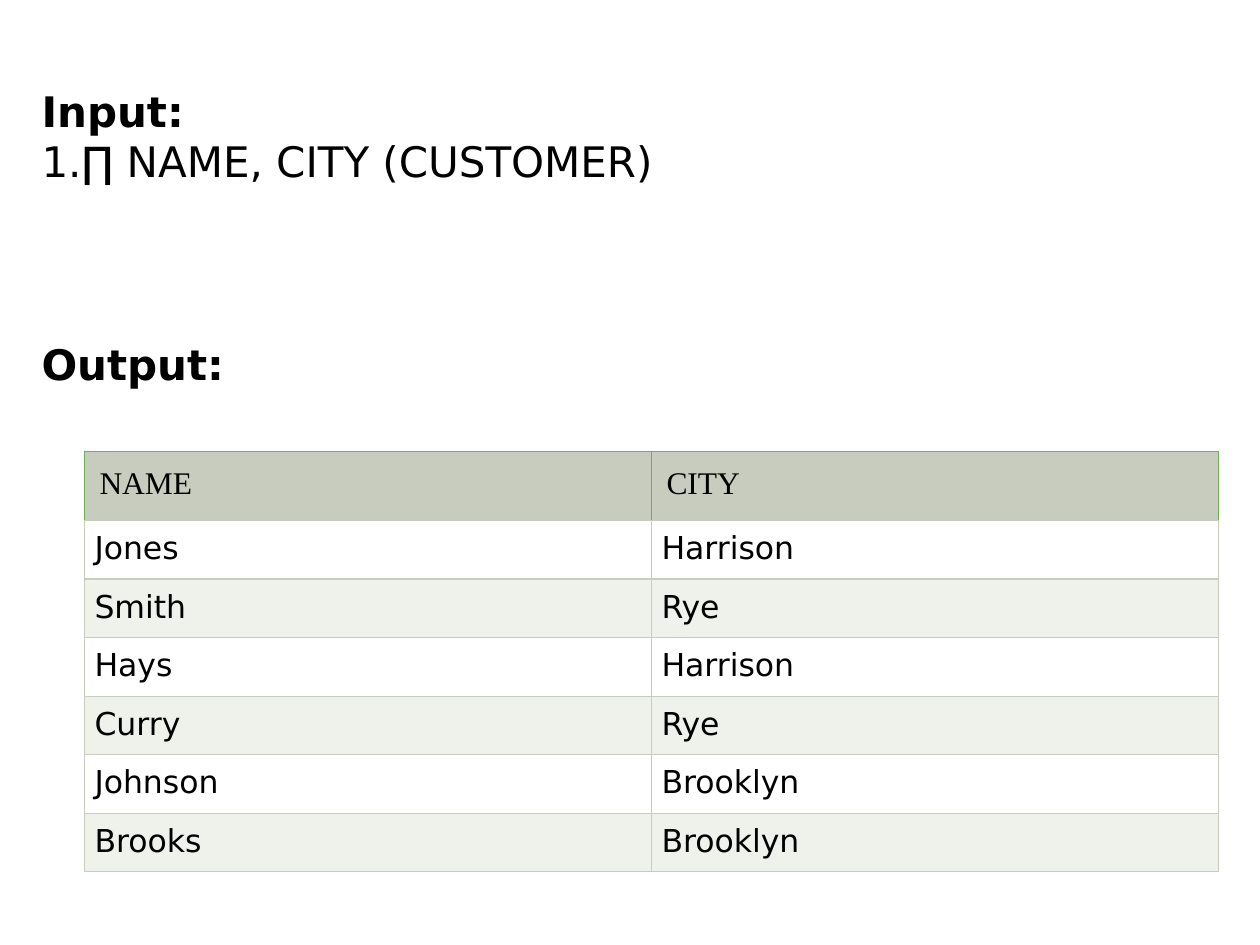
from lxml.etree import SubElement
from pptx import Presentation
from pptx.dml.color import RGBColor
from pptx.enum.text import MSO_ANCHOR
from pptx.oxml.ns import qn
from pptx.util import Inches, Pt

BLACK = RGBColor(0x00, 0x00, 0x00)
WHITE = RGBColor(0xFF, 0xFF, 0xFF)
SAGE = RGBColor(0xC7, 0xCC, 0xBE)
PALE_SAGE = RGBColor(0xEF, 0xF1, 0xEB)
GREEN = RGBColor(0x70, 0xB0, 0x53)

BODY_FONT = "DejaVu Sans"
HEADER_FONT = "Times New Roman"

CUSTOMERS = [
    ("NAME", "CITY"),
    ("Jones", "Harrison"),
    ("Smith", "Rye"),
    ("Hays", "Harrison"),
    ("Curry", "Rye"),
    ("Johnson", "Brooklyn"),
    ("Brooks", "Brooklyn"),
]


def format_runs(paragraph, name, size, bold=False):
    for run in paragraph.runs:
        run.font.name = name
        run.font.size = Pt(size)
        run.font.bold = bold
        run.font.color.rgb = BLACK


def number_paragraph(paragraph):
    properties = paragraph._p.get_or_add_pPr()
    properties.set("marL", "0")
    properties.set("indent", "0")
    SubElement(properties, qn("a:buAutoNum"), type="arabicPeriod")


def set_borders(cell, side_color, bottom_color):
    properties = cell._tc.get_or_add_tcPr()
    colors = {"lnL": side_color, "lnR": side_color, "lnT": side_color, "lnB": bottom_color}
    for position, (tag, color) in enumerate(colors.items()):
        line = SubElement(properties, qn(f"a:{tag}"), w=str(Pt(0.75)))
        fill = SubElement(line, qn("a:solidFill"))
        SubElement(fill, qn("a:srgbClr"), val=str(color))
        properties.insert(position, line)


def add_query(slide, left, top, width, height):
    text_frame = slide.shapes.add_textbox(left, top, width, height).text_frame
    text_frame.word_wrap = True
    text_frame.vertical_anchor = MSO_ANCHOR.MIDDLE
    text_frame.margin_left = text_frame.margin_right = 0
    text_frame.margin_top = text_frame.margin_bottom = 0
    text_frame.text = "Input:\n∏ NAME, CITY (CUSTOMER)\nOutput:"
    heading, query, output = text_frame.paragraphs
    for paragraph in text_frame.paragraphs:
        paragraph.line_spacing = Pt(29)
        format_runs(paragraph, BODY_FONT, 24, bold=paragraph is not query)
    number_paragraph(query)
    format_runs(query, BODY_FONT, 24)
    format_runs(heading, BODY_FONT, 24, bold=True)
    output.space_before = Pt(87)


def add_customer_table(slide, left, top, width, height):
    header_height = Inches(0.55)
    row_height = (height - header_height) // (len(CUSTOMERS) - 1)
    table = slide.shapes.add_table(
        len(CUSTOMERS), len(CUSTOMERS[0]), left, top, width, height
    ).table
    for row_index, values in enumerate(CUSTOMERS):
        is_header = row_index == 0
        table.rows[row_index].height = header_height if is_header else row_height
        margin = Inches(0.12 if is_header else 0.08)
        band = WHITE if row_index % 2 else PALE_SAGE
        for column_index, value in enumerate(values):
            cell = table.cell(row_index, column_index)
            cell.text = value
            cell.margin_left = cell.margin_right = margin
            cell.margin_top = cell.margin_bottom = margin
            cell.fill.solid()
            cell.fill.fore_color.rgb = SAGE if is_header else band
            set_borders(cell, GREEN if is_header else SAGE, SAGE)
            format_runs(
                cell.text_frame.paragraphs[0], HEADER_FONT if is_header else BODY_FONT, 18
            )


def main():
    presentation = Presentation()
    presentation.slide_width = Inches(10)
    presentation.slide_height = Inches(7.5)
    slide = presentation.slides.add_slide(presentation.slide_layouts[6])
    add_customer_table(slide, Inches(0.67), Inches(3.58), Inches(9), Inches(3.34))
    add_query(slide, Inches(0.33), Inches(0.67), Inches(7.5), Inches(2.42))
    presentation.save("out.pptx")


if __name__ == "__main__":
    main()
